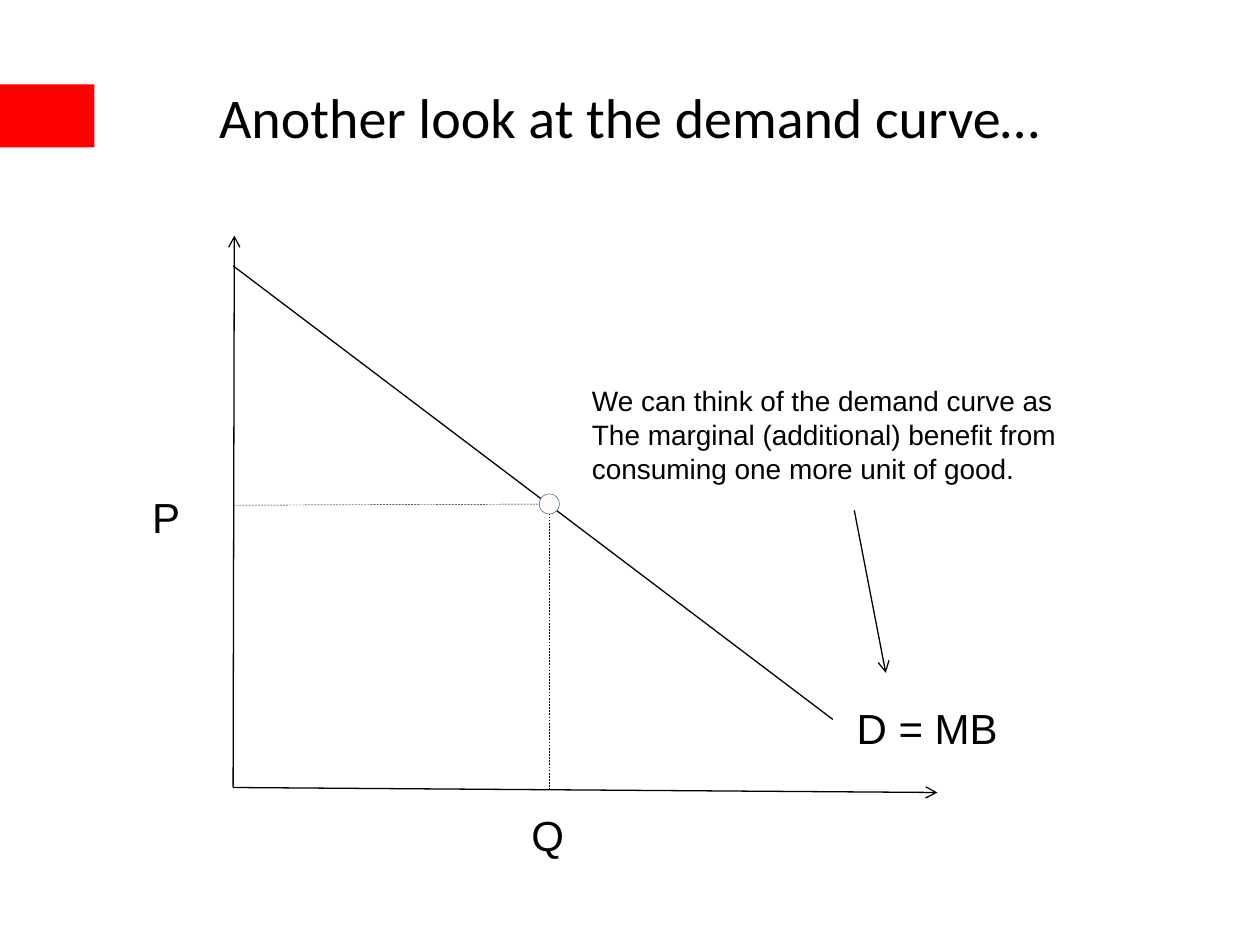
from dataclasses import dataclass

from pptx import Presentation
from pptx.dml.color import RGBColor
from pptx.enum.dml import MSO_LINE
from pptx.enum.shapes import MSO_CONNECTOR, MSO_SHAPE
from pptx.enum.text import MSO_ANCHOR, MSO_AUTO_SIZE, PP_ALIGN
from pptx.oxml.ns import qn
from pptx.util import Inches, Pt
from lxml import etree

STRAIGHT = MSO_CONNECTOR.STRAIGHT
RECTANGLE, OVAL = MSO_SHAPE.RECTANGLE, MSO_SHAPE.OVAL
DASH = MSO_LINE.DASH
MIDDLE, CENTER = MSO_ANCHOR.MIDDLE, PP_ALIGN.CENTER
GROW = MSO_AUTO_SIZE.SHAPE_TO_FIT_TEXT
COLUMNS, ROWS = 100, 75


@dataclass(frozen=True)
class Theme:
    ink: RGBColor = RGBColor(0x00, 0x00, 0x00)
    accent: RGBColor = RGBColor(0xFF, 0x00, 0x00)
    point_fill: RGBColor = RGBColor(0xFC, 0xFB, 0xF9)
    point_edge: RGBColor = RGBColor(0x1F, 0x49, 0x7D)
    title_font: str = "Calibri"
    body_font: str = "Arial"
    title_size: int = 32
    label_size: int = 24
    note_size: int = 16
    line_width: float = 0.75
    guide_width: float = 0.25
    line_spacing: float = 0.8
    paragraph_gap: float = 0.24


class DiagramSlide:
    def __init__(self, deck, theme):
        self.theme = theme
        self.column = deck.slide_width / COLUMNS
        self.row = deck.slide_height / ROWS
        self.shapes = deck.slides.add_slide(deck.slide_layouts[6]).shapes

    def place(self, x, y):
        return round(x * self.column), round(y * self.row)

    def style(self, paragraph, font, size):
        paragraph.font.name = font
        paragraph.font.size = Pt(size)
        paragraph.font.color.rgb = self.theme.ink

    def title(self, text, x, y, width, height):
        box = self.shapes.add_textbox(*self.place(x, y), *self.place(width, height))
        frame = box.text_frame
        frame.word_wrap = True
        frame.vertical_anchor = MIDDLE
        frame.text = text
        heading = frame.paragraphs[0]
        heading.alignment = CENTER
        self.style(heading, self.theme.title_font, self.theme.title_size)

    def label(self, text, x, y, width, height, size):
        box = self.shapes.add_textbox(*self.place(x, y), *self.place(width, height))
        frame = box.text_frame
        frame.word_wrap = False
        frame.auto_size = GROW
        frame.text = text
        for index, paragraph in enumerate(frame.paragraphs):
            paragraph.line_spacing = self.theme.line_spacing
            if index:
                paragraph.space_before = Pt(size * self.theme.paragraph_gap)
            self.style(paragraph, self.theme.body_font, size)

    def block(self, preset, x, y, width, height, fill, edge=None):
        shape = self.shapes.add_shape(preset, *self.place(x, y), *self.place(width, height))
        shape.shadow.inherit = False
        shape.fill.solid()
        shape.fill.fore_color.rgb = fill
        if edge is None:
            shape.line.fill.background()
        else:
            shape.line.color.rgb = edge
            shape.line.width = Pt(self.theme.guide_width)

    def line(self, start, end, arrow=False, guide=False):
        connector = self.shapes.add_connector(STRAIGHT, *self.place(*start), *self.place(*end))
        connector.line.color.rgb = self.theme.ink
        connector.line.width = Pt(self.theme.guide_width if guide else self.theme.line_width)
        if guide:
            connector.line.dash_style = DASH
        if arrow:
            etree.SubElement(connector.line._get_or_add_ln(), qn("a:tailEnd"), type="arrow")
        etree.SubElement(connector._element.spPr, qn("a:effectLst"))


def main():
    deck = Presentation()
    deck.slide_width, deck.slide_height = Inches(10), Inches(7.5)
    theme = Theme()
    slide = DiagramSlide(deck, theme)

    origin = (18.5, 62.5)
    equilibrium = (43.6, 40)
    radius = 0.8

    slide.block(RECTANGLE, 0, 6.7, 7.5, 5, theme.accent)
    slide.title("Another look at the demand curve…", 5, 3, 90, 12.5)

    slide.line((equilibrium[0], 40.5), (equilibrium[0], 62.6), guide=True)
    slide.line((66.1, 57.1), (18.5, 21.1))
    slide.line(origin, (74.4, 62.9), arrow=True)
    slide.line(origin, (18.6, 18.7), arrow=True)
    slide.line((18.5, 40.1), (44.4, 40), guide=True)
    slide.block(OVAL, equilibrium[0] - radius, equilibrium[1] - radius,
                2 * radius, 2 * radius, theme.point_fill, theme.point_edge)

    for text, x, y, width in (
        ("P", 11.1, 39.3, 4.3),
        ("Q", 41.2, 64.5, 4.6),
        ("D = MB", 67, 56, 13.3),
    ):
        slide.label(text, x, y, width, 4.2, theme.label_size)

    slide.line((67.8, 40.5), (70.3, 53.4), arrow=True)
    slide.label(
        "We can think of the demand curve as\n"
        "The marginal (additional) benefit from\n"
        "consuming one more unit of good.",
        46, 30.5, 39.3, 8.5, theme.note_size)

    deck.save("out.pptx")


if __name__ == "__main__":
    main()
